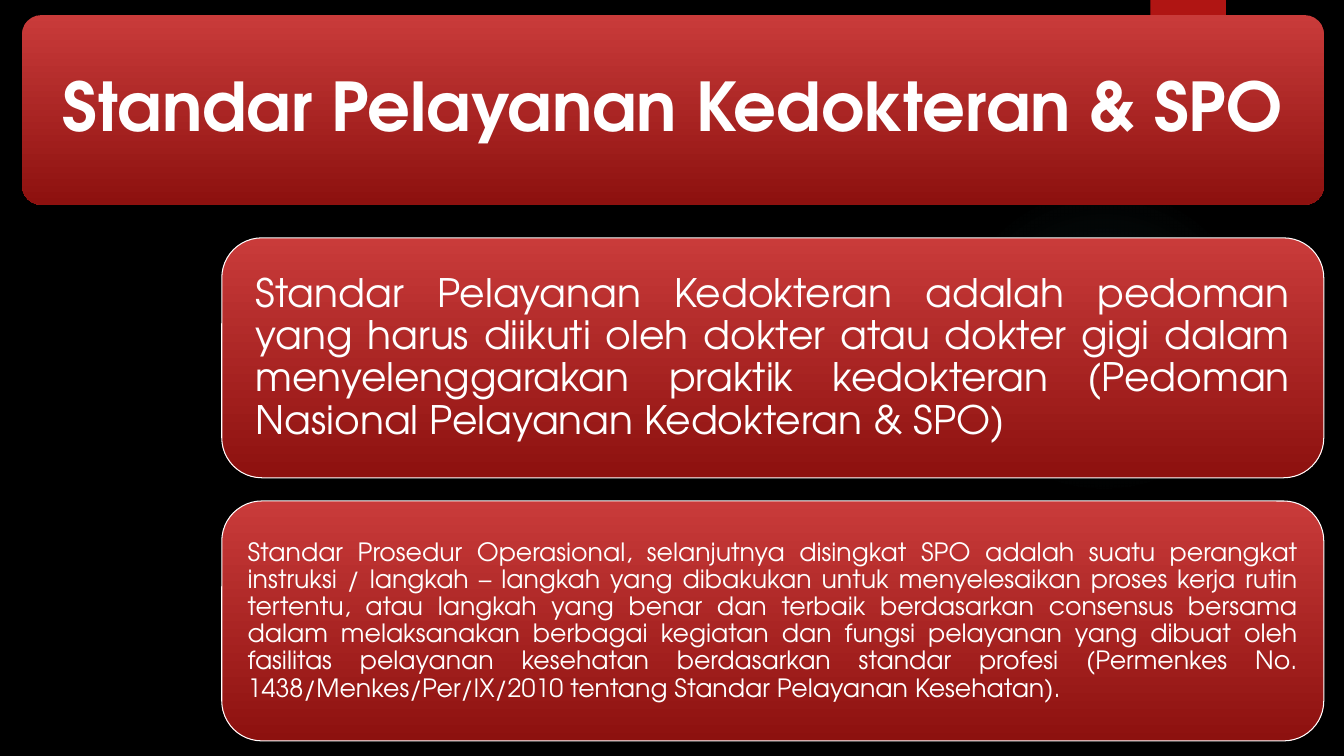
from pptx import Presentation
from pptx.dml.color import RGBColor
from pptx.enum.shapes import MSO_SHAPE as Shape
from pptx.enum.text import MSO_ANCHOR as Anchor, PP_ALIGN as Align
from pptx.oxml import parse_xml
from pptx.oxml.ns import nsdecls
from pptx.util import Inches, Pt

FONT = "TeX Gyre Adventor"
BLACK, WHITE, RED, TEAL = "000000", "FFFFFF", "B01513", "50B9C1"
PANEL_STOPS = [(0, "C93B3A", 100), (100, "8D110F", 100)]
GLOW_STOPS = [(0, TEAL, 7), (36, TEAL, 6), (69, TEAL, 0), (100, TEAL, 0)]
DOWNWARD = '<a:lin ang="5400000" scaled="0"/>'
FROM_CENTRE = ('<a:path path="circle"><a:fillToRect l="50000" t="50000" '
               'r="50000" b="50000"/></a:path>')

TITLE = "Standar Pelayanan Kedokteran & SPO"
DEFINITIONS = [
    ("Standar Pelayanan Kedokteran adalah pedoman yang harus diikuti oleh "
     "dokter atau dokter gigi dalam menyelenggarakan praktik kedokteran "
     "(Pedoman Nasional Pelayanan Kedokteran & SPO)", 28, 0.22),
    ("Standar Prosedur Operasional, selanjutnya disingkat SPO adalah suatu "
     "perangkat instruksi / langkah – langkah yang dibakukan untuk "
     "menyelesaikan proses kerja rutin tertentu, atau langkah yang benar dan "
     "terbaik berdasarkan consensus bersama dalam melaksanakan berbagai "
     "kegiatan dan fungsi pelayanan yang dibuat oleh fasilitas pelayanan "
     "kesehatan berdasarkan standar profesi (Permenkes No. "
     "1438/Menkes/Per/IX/2010 tentang Standar Pelayanan Kesehatan).", 18, 0.14),
]

WIDTH, HEIGHT = 13.33, 7.5
RIGHT = 13.13
TITLE_LEFT, TITLE_TOP, TITLE_HEIGHT = 0.22, 0.15, 1.88
PANEL_LEFT, PANEL_TOP, PANEL_HEIGHT, PANEL_STEP = 2.2, 2.36, 2.38, 2.61


def color(code):
    return RGBColor.from_string(code)


def add_block(kind, left, top, width, height):
    block = slide.shapes.add_shape(
        kind, Inches(left), Inches(top), Inches(width), Inches(height))
    block.shadow.inherit = False
    block.line.fill.background()
    return block


def fill_gradient(block, stops, direction):
    marks = "".join(
        f'<a:gs pos="{pos * 1000}"><a:srgbClr val="{code}">'
        f'<a:alpha val="{alpha * 1000}"/></a:srgbClr></a:gs>'
        for pos, code, alpha in stops)
    block._element.spPr.insert(2, parse_xml(
        f'<a:gradFill {nsdecls("a")} rotWithShape="1"><a:gsLst>{marks}</a:gsLst>'
        f'{direction}</a:gradFill>'))


def add_panel(text, left, top, height, rounding, size, align, insets, bold=False):
    panel = add_block(Shape.ROUNDED_RECTANGLE, left, top, RIGHT - left, height)
    panel.adjustments[0] = rounding
    fill_gradient(panel, PANEL_STOPS, DOWNWARD)
    frame = panel.text_frame
    frame.text = text
    frame.word_wrap = True
    frame.vertical_anchor = Anchor.MIDDLE
    frame.margin_left = frame.margin_right = Inches(insets[0])
    frame.margin_top = frame.margin_bottom = Inches(insets[1])
    paragraph = frame.paragraphs[0]
    paragraph.alignment = align
    paragraph.line_spacing = 0.9
    font = paragraph.runs[0].font
    font.name, font.size, font.bold = FONT, Pt(size), bold
    font.color.rgb = color(WHITE)
    return panel


def build():
    """Draw the backdrop, the title banner and the two definition panels."""
    background = slide.background.fill
    background.solid()
    background.fore_color.rgb = color(BLACK)

    glow = add_block(Shape.OVAL, 9.41, 1.83, 3.08, 3.08)
    fill_gradient(glow, GLOW_STOPS, FROM_CENTRE)
    ribbon = add_block(Shape.RECTANGLE, 11.41, 0, 0.75, 1.25)
    ribbon.fill.solid()
    ribbon.fill.fore_color.rgb = color(RED)

    add_panel(TITLE, TITLE_LEFT, TITLE_TOP, TITLE_HEIGHT, 0.1, 48,
              Align.CENTER, (0.1, 0.07), bold=True)
    for row, (definition, size, inset) in enumerate(DEFINITIONS):
        panel = add_panel(definition, PANEL_LEFT, PANEL_TOP + row * PANEL_STEP,
                          PANEL_HEIGHT, 0.167, size, Align.JUSTIFY, (inset, inset))
        panel.line.color.rgb = color(WHITE)
        panel.line.width = Pt(0.75)


deck = Presentation()
deck.slide_width, deck.slide_height = Inches(WIDTH), Inches(HEIGHT)
slide = deck.slides.add_slide(deck.slide_layouts[6])
build()
deck.save("out.pptx")
